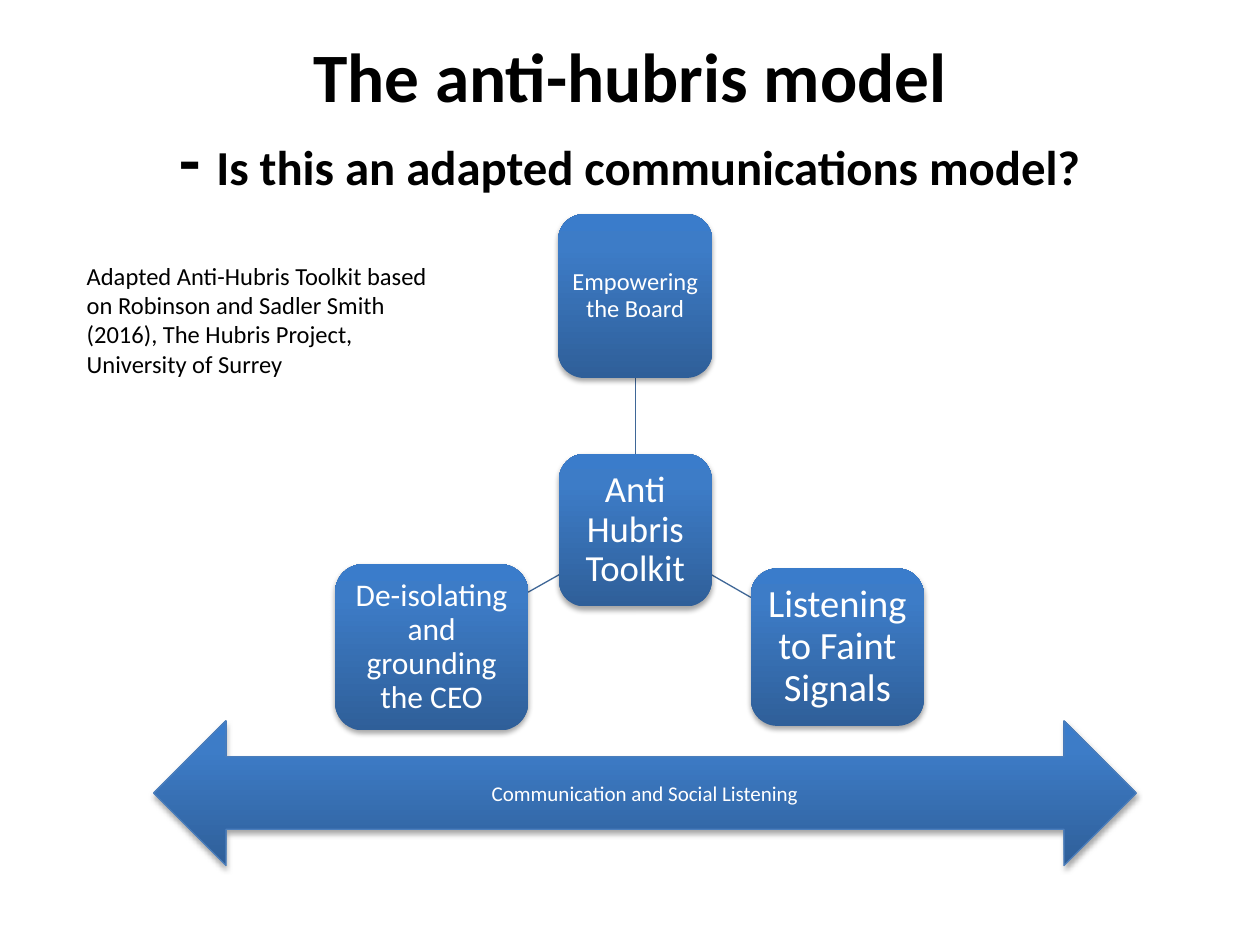
from copy import deepcopy
from lxml.etree import SubElement
from pptx import Presentation
from pptx.dml.color import RGBColor as RGB
from pptx.enum.shapes import MSO_CONNECTOR as LINK, MSO_SHAPE as SHAPE
from pptx.enum.text import MSO_ANCHOR as ANCHOR, MSO_AUTO_SIZE as FIT, PP_ALIGN as ALIGN
from pptx.oxml.ns import qn
from pptx.util import Pt

HUES = {"ink": "000000", "white": "FFFFFF", "low": "2F5F99", "mid": "3D7CC7",
        "high": "3A7CCB", "link": "3F6797", "edge": "4B7EBC"}
STOPS = [("low", 0), ("mid", 0.8), ("high", 1)]
NODES = [("Anti Hubris Toolkit", 21, 4, (128, 137, 87.2, 87.2)),
         ("Empowering the Board", 14, 3, (127.5, 0, 88, 93.6)),
         ("Listening to Faint Signals", 22, 4, (237.6, 202.4, 98.8, 90)),
         ("De-isolating and grounding the CEO", 18, 3.5, (0, 200, 110.3, 95))]
LINKS = [(171.5, 137, 171.5, 93.6), (215, 206, 237.6, 219), (128, 206, 110.3, 216)]


def hue(name):
    """Return the named colour."""
    return RGB.from_string(HUES[name])


def style(par, size, tint, align=ALIGN.CENTER):
    """Set the font and alignment of a paragraph."""
    par.alignment = align
    font = par.font
    font.name, font.size = "Calibri", Pt(size)
    font.color.rgb = hue(tint)


def block(slide, kind, box, text, size):
    """Add a shaded, shadowed shape with centred text."""
    shape = slide.shapes.add_shape(kind, *map(Pt, box))
    shape.fill.gradient()
    shape.fill.gradient_angle = 90
    props = shape._element.spPr
    stops = props.find(".//" + qn("a:gsLst"))
    stops.append(deepcopy(stops[0]))
    for stop, (tint, place) in zip(shape.fill.gradient_stops, STOPS):
        stop.color.rgb, stop.position = hue(tint), place
    shape.line.fill.background()
    shape.shadow.inherit = False
    shade = SubElement(props.find(qn("a:effectLst")), qn("a:outerShdw"), blurRad=str(Pt(3.1)),
                       dist=str(Pt(1.8)), dir="5400000", rotWithShape="0")
    tone = SubElement(shade, qn("a:srgbClr"), val=HUES["ink"])
    SubElement(tone, qn("a:alpha"), val="35000")
    frame = shape.text_frame
    frame.word_wrap, frame.vertical_anchor = True, ANCHOR.MIDDLE
    frame.text = text
    style(frame.paragraphs[0], size, "white")
    return shape


def head(slide, box):
    """Fill the title placeholder with a heading and a smaller question."""
    title = slide.shapes.title
    title.left, title.top, title.width, title.height = map(Pt, box)
    frame = title.text_frame
    frame.auto_size, frame.vertical_anchor = FIT.NONE, ANCHOR.MIDDLE
    par = frame.paragraphs[0]
    style(par, 39.6, "ink")
    par.font.bold = True
    par.add_run().text = "The anti-hubris model"
    par.add_line_break()
    par.add_run().text = "- "
    ask = par.add_run()
    ask.text = "Is this an adapted communications model?"
    ask.font.size = Pt(27.9)


def model(slide, left, top):
    """Draw the toolkit hub with its three linked nodes."""
    for x1, y1, x2, y2 in LINKS:
        ends = (left + x1, top + y1, left + x2, top + y2)
        link = slide.shapes.add_connector(LINK.STRAIGHT, *map(Pt, ends))
        link.line.width = Pt(0.75)
        link.line.color.rgb = hue("link")
        SubElement(link._element.spPr, qn("a:effectLst"))
    for text, size, inset, (x, y, wide, high) in NODES:
        node = block(slide, SHAPE.ROUNDED_RECTANGLE, (left + x, top + y, wide, high), text, size)
        frame = node.text_frame
        frame.margin_left = frame.margin_right = Pt(inset)
        frame.margin_top = frame.margin_bottom = Pt(inset)
        frame.paragraphs[0].line_spacing = 0.9


def base(slide, box):
    """Draw the two-way arrow under the model."""
    arrow = block(slide, SHAPE.LEFT_RIGHT_ARROW, box, "Communication and Social Listening", 12)
    arrow.line.width = Pt(0.75)
    arrow.line.color.rgb = hue("edge")


def credit(slide, box):
    """Add the source note beside the model."""
    frame = slide.shapes.add_textbox(*map(Pt, box)).text_frame
    frame.word_wrap = True
    frame.auto_size = FIT.SHAPE_TO_FIT_TEXT
    frame.text = ("Adapted Anti-Hubris Toolkit based on Robinson and Sadler Smith (2016), "
                  "The Hubris Project, University of Surrey")
    style(frame.paragraphs[0], 14, "ink", ALIGN.LEFT)


def main():
    """Build and save the slide."""
    deck = Presentation()
    deck.slide_width, deck.slide_height = Pt(720), Pt(540)
    slide = deck.slides.add_slide(deck.slide_layouts[5])
    head(slide, (36, 21.6, 648, 90))
    model(slide, 191.5, 122.4)
    base(slide, (87.8, 411.8, 561.6, 82.8))
    credit(slide, (42.5, 145.4, 221, 74.9))
    deck.save("out.pptx")


if __name__ == "__main__":
    main()
